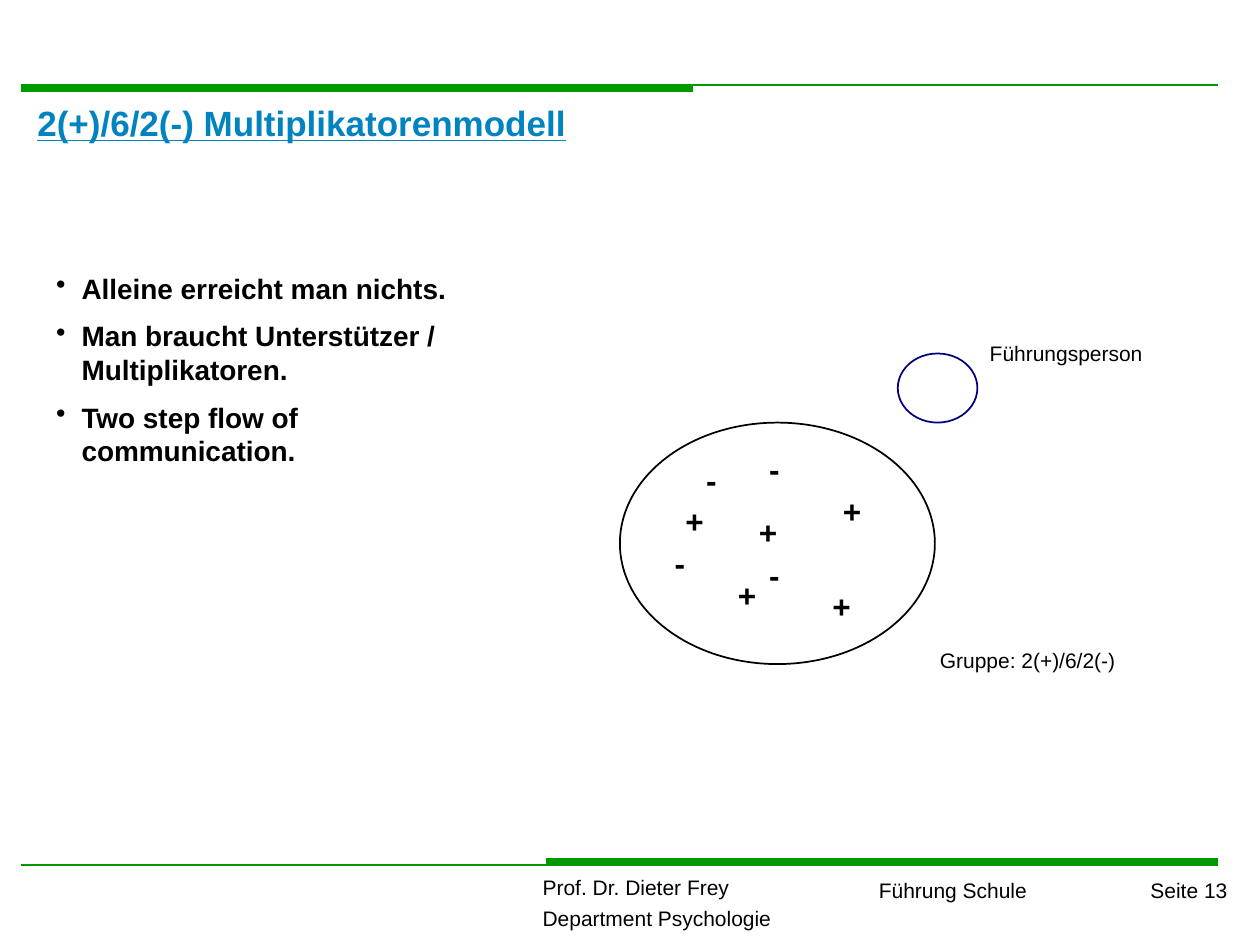
from lxml import etree
from pptx import Presentation
from pptx import util as u
from pptx.dml.color import RGBColor
from pptx.enum import shapes, text
from pptx.oxml.ns import qn

Pt = u.Pt
GREEN, BLACK, NAVY, BLUE = "009900", "000000", "000080", "0083BF"


def color(value):
    return RGBColor.from_string(value)


def add_text(page, place, lines, size=12, ink=BLACK, align="LEFT", spacing=1.0, bullet=None, **style):
    box = page.shapes.add_textbox(*map(Pt, place))
    frame = box.text_frame
    frame.word_wrap = True
    for index, line in enumerate(lines):
        para = frame.paragraphs[0] if index == 0 else frame.add_paragraph()
        layout = {"alignment": getattr(text.PP_ALIGN, align), "line_spacing": spacing}
        if index:
            layout["space_before"] = Pt(size / 2)
        for name, value in layout.items():
            setattr(para, name, value)
        if bullet:
            props = para._p.get_or_add_pPr()
            props.set("marL", str(Pt(14.5)))
            props.set("indent", str(Pt(-14.5)))
            etree.SubElement(props, qn("a:buChar")).set("char", bullet)
        span = para.add_run()
        span.text = line
        span.font.color.rgb = color(ink)
        for name, value in {"name": "Arial", "size": Pt(size), **style}.items():
            setattr(span.font, name, value)


deck = Presentation()
deck.slide_width, deck.slide_height = Pt(720), Pt(540)
page = deck.slides.add_slide(deck.slide_layouts[6])

for left, right, y, width in [
    (276, 696, 48.75, 1),
    (12, 396, 50.5, 4.5),
    (12, 444, 494.5, 1),
    (312, 696, 492.5, 4.5),
]:
    rule = page.shapes.add_connector(shapes.MSO_CONNECTOR.STRAIGHT, Pt(left), Pt(y), Pt(right), Pt(y))
    rule.line.color.rgb = color(GREEN)
    rule.line.width = Pt(width)
    etree.SubElement(rule._element.spPr, qn("a:effectLst"))

add_text(page, (433.5, 500.5, 160.5, 18.5), ["Führung Schule"], align="RIGHT", spacing=0.8)
add_text(page, (303, 499, 260.5, 37.5), ["Prof. Dr. Dieter Frey", "Department Psychologie"], spacing=0.8)
add_text(page, (570, 502, 138.5, 17.5), ["Seite 13"], align="RIGHT", spacing=0.7)
add_text(page, (14.25, 54.5, 618, 48), ["2(+)/6/2(-) Multiplikatorenmodell"],
         size=20, ink=BLUE, bold=True, underline=True)

for place, ink in [
    ((354.25, 241.5, 180, 138), BLACK),
    ((513, 202, 45.5, 39.5), NAVY),
]:
    circle = page.shapes.add_shape(shapes.MSO_SHAPE.OVAL, *map(Pt, place))
    circle.shadow.inherit = False
    circle.fill.background()
    circle.line.color.rgb = color(ink)
    circle.line.width = Pt(1)

members = {
    "+": (24, [(384.5, 283.5), (414.5, 325.5), (468.5, 332), (426.5, 289.5), (474.5, 277.5)]),
    "-": (30, [(396.5, 260), (432.5, 253.5), (378.5, 307.5), (432.5, 314)]),
}
for sign, (width, spots) in members.items():
    for left, top in spots:
        add_text(page, (left, top, width, 29), [sign], size=18, bold=True)

add_text(page, (558.5, 191, 124.5, 21.5), ["Führungsperson"])
add_text(page, (530, 366.5, 136, 21.5), ["Gruppe: 2(+)/6/2(-)"])
add_text(page, (25, 151.5, 272, 152), [
    "Alleine erreicht man nichts.",
    "Man braucht Unterstützer / Multiplikatoren.",
    "Two step flow of communication.",
], size=16, bullet="•", bold=True)

deck.save("out.pptx")
